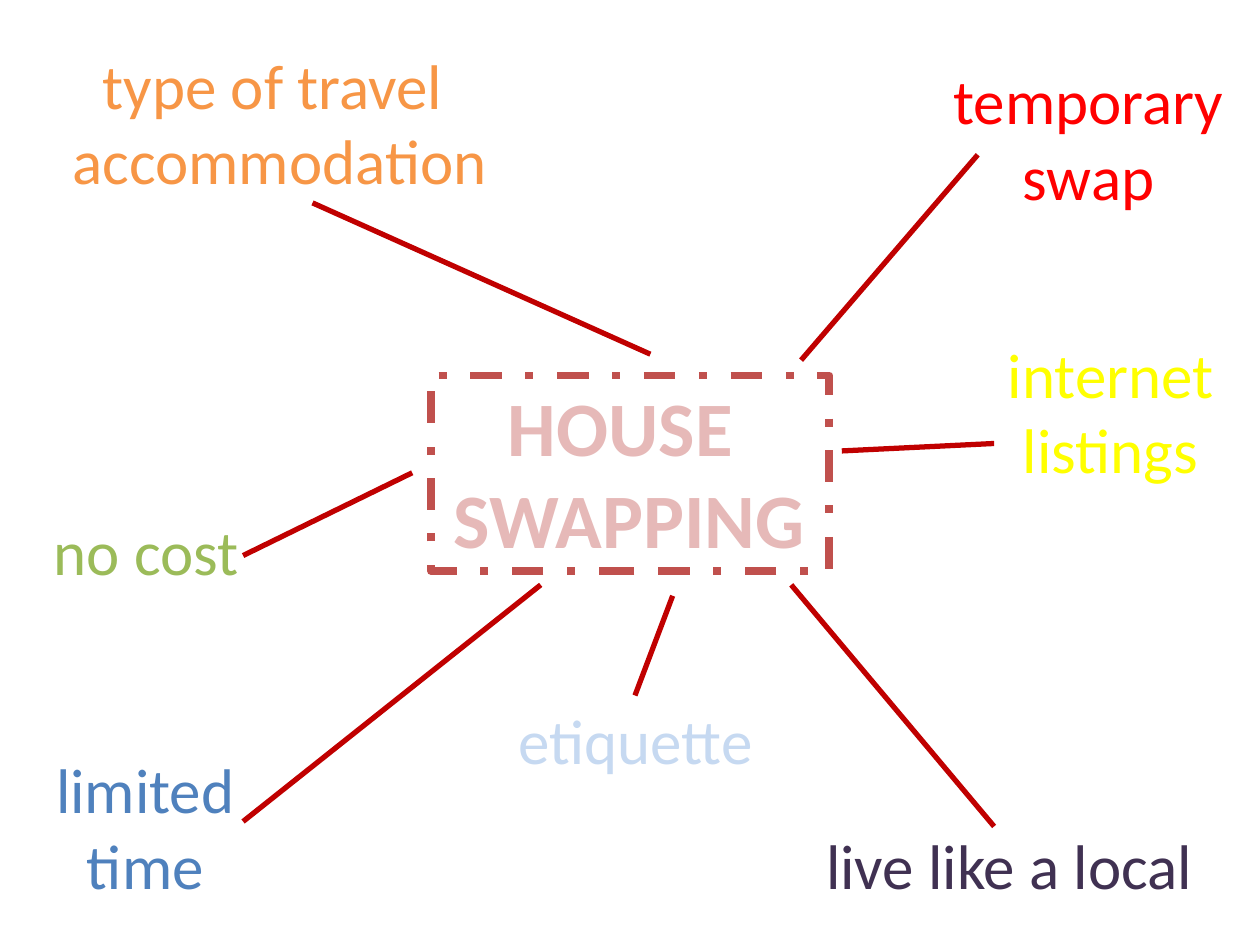
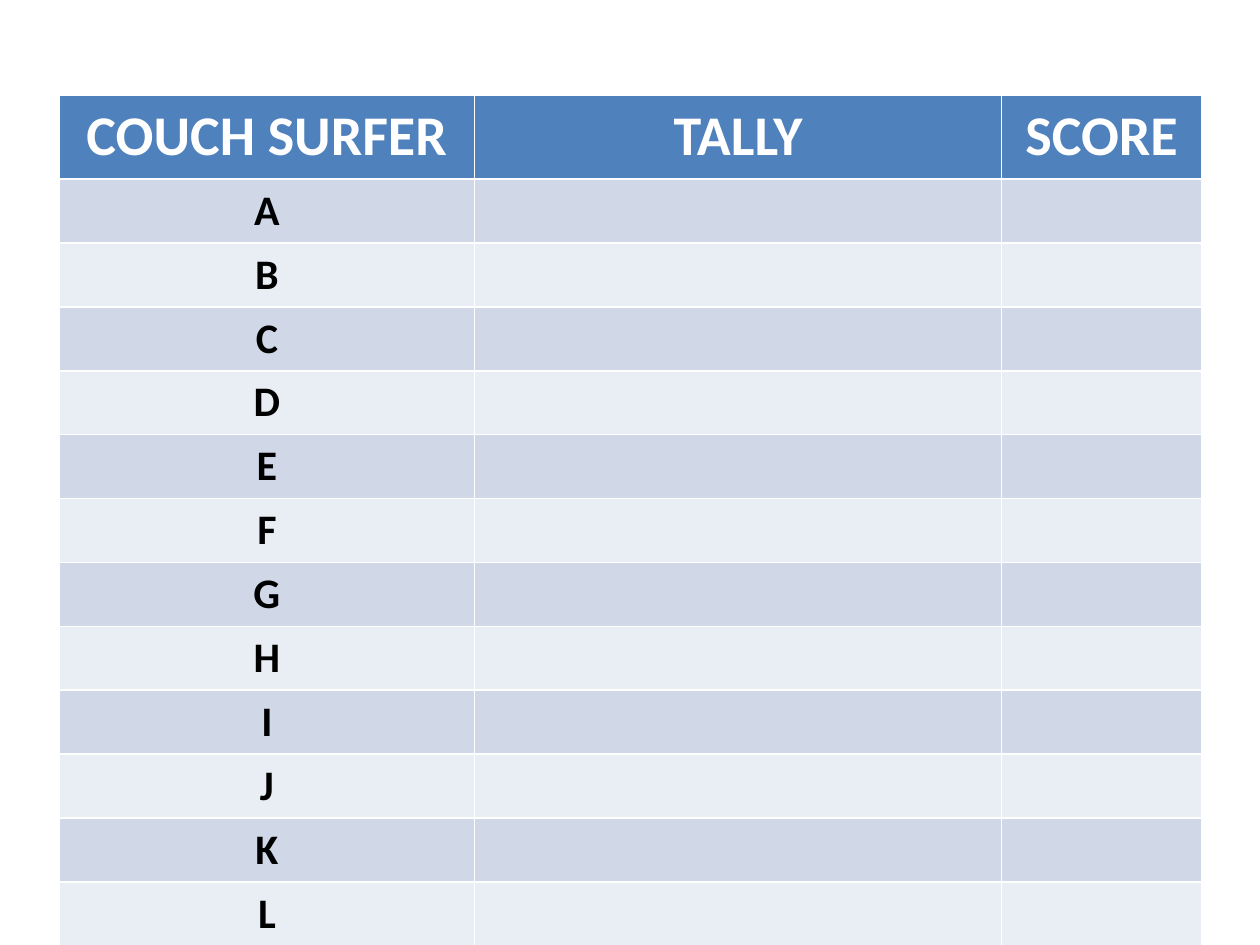
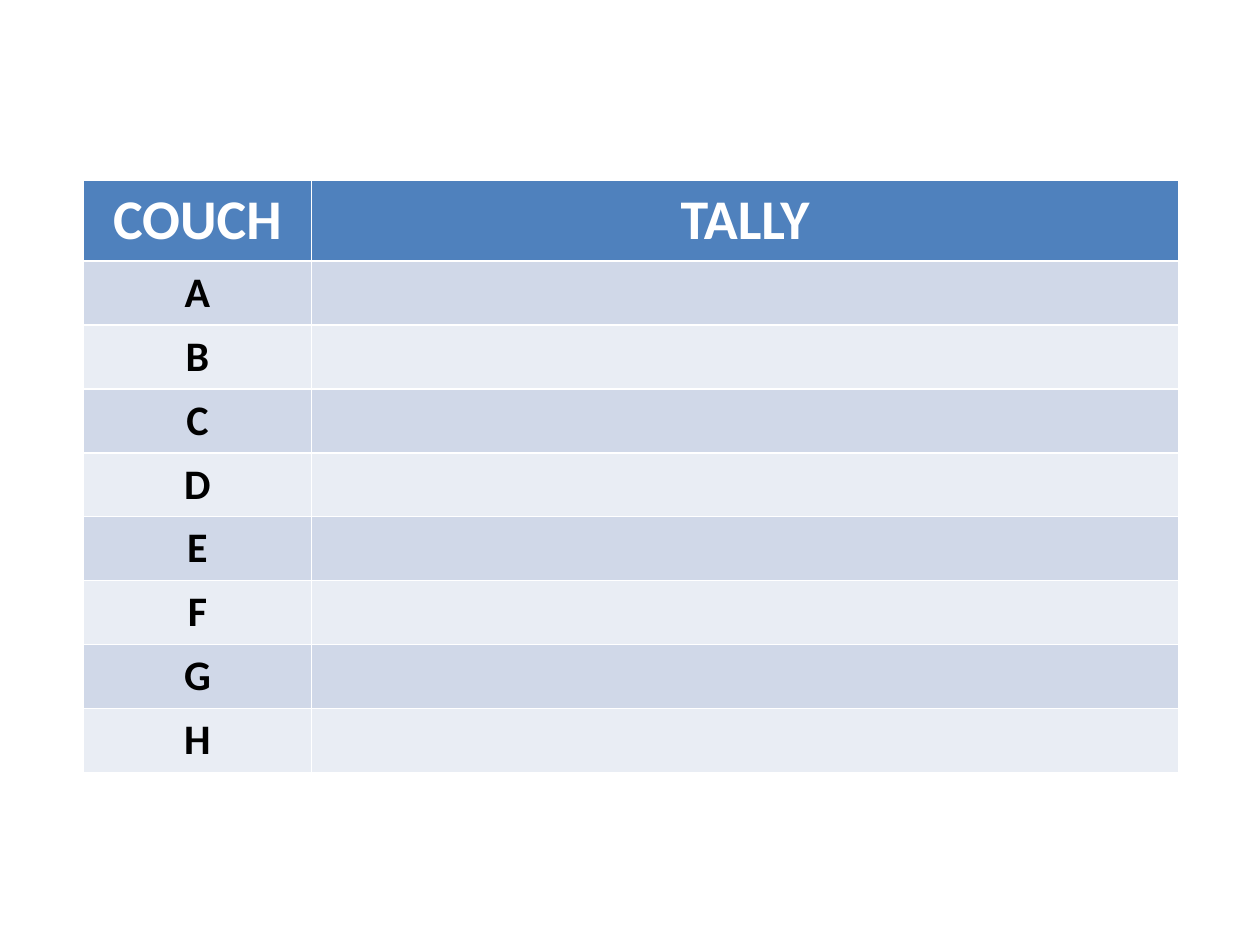
"""Build a house swapping word map and two couch surfing tally tables."""
from lxml.etree import SubElement
from pptx import Presentation
from pptx.dml.color import RGBColor
from pptx.enum.dml import MSO_LINE
from pptx.enum.shapes import MSO_CONNECTOR, MSO_SHAPE
from pptx.enum.text import MSO_AUTO_SIZE, PP_ALIGN
from pptx.oxml import parse_xml
from pptx.oxml.ns import nsdecls, qn
from pptx.util import Cm, Pt

WHITE = RGBColor(0xFF, 0xFF, 0xFF)
BLACK = RGBColor(0x00, 0x00, 0x00)
BLUE = RGBColor(0x4F, 0x81, 0xBD)
PALE_BLUE = RGBColor(0xC6, 0xD9, 0xF1)
BAND_DARK = RGBColor(0xD0, 0xD8, 0xE8)
BAND_LIGHT = RGBColor(0xE9, 0xED, 0xF4)
PINK = RGBColor(0xE6, 0xB9, 0xB8)
BRICK = RGBColor(0xC0, 0x50, 0x4D)
DARK_RED = RGBColor(0xC0, 0x00, 0x00)
RED = RGBColor(0xFF, 0x00, 0x00)
YELLOW = RGBColor(0xFF, 0xFF, 0x00)
ORANGE = RGBColor(0xF7, 0x96, 0x46)
GREEN = RGBColor(0x9B, 0xBB, 0x59)
PURPLE = RGBColor(0x40, 0x31, 0x52)

TOPIC = {"name": "Calibri", "size": Pt(44), "bold": True}
IDEA = {"name": "Calibri", "size": Pt(36)}
HEADING = {"name": "Calibri", "size": Pt(32), "bold": True}
LABEL = {"name": "Calibri", "size": Pt(24), "bold": True}


def write(para, text, look, color):
    """Add one centred run to a paragraph and return it."""
    para.alignment = PP_ALIGN.CENTER
    span = para.add_run()
    span.text = text
    for name, value in look.items():
        setattr(span.font, name, value)
    span.font.color.rgb = color
    return span


deck = Presentation()
deck.slide_width, deck.slide_height = Cm(25.4), Cm(19.05)
blank = deck.slide_layouts[6]

page = deck.slides.add_slide(blank)
words = [
    (["HOUSE ", "SWAPPING"], TOPIC, PINK, False, (8.86, 7.52, 7.65, 4.01)),
    (["live like a local"], IDEA, PURPLE, True, (15.19, 16.54, 10.31, 1.8)),
    (["no cost"], IDEA, GREEN, True, (-0.15, 10.21, 6.2, 1.8)),
    (["type of travel ", "accommodation"], IDEA, ORANGE, False, (1.17, 0.81, 8.94, 3.33)),
    (["etiquette"], IDEA, PALE_BLUE, False, (10.16, 14.02, 5.31, 1.8)),
    (["temporary", "swap"], IDEA, RED, False, (18.95, 1.12, 5.99, 3.33)),
    (["internet", "listings"], IDEA, YELLOW, False, (20.04, 6.63, 4.7, 3.33)),
    (["limited", "time"], IDEA, BLUE, False, (0.86, 15.01, 4.14, 3.33)),
]
for lines, look, color, wraps, place in words:
    box = page.shapes.add_textbox(*map(Cm, place))
    frame = box.text_frame
    frame.word_wrap = wraps
    frame.auto_size = MSO_AUTO_SIZE.SHAPE_TO_FIT_TEXT
    for index, line in enumerate(lines):
        para = frame.add_paragraph() if index else frame.paragraphs[0]
        span = write(para, line, look, color)
        if look is TOPIC:
            outline = parse_xml(
                f'<a:ln {nsdecls("a")} w="{Pt(1.75)}"><a:solidFill>'
                f'<a:srgbClr val="{BRICK}"/></a:solidFill></a:ln>')
            span.font._element.insert(0, outline)

border = page.shapes.add_shape(MSO_SHAPE.RECTANGLE, Cm(8.69), Cm(7.57), Cm(8.03), Cm(3.94))
border.shadow.inherit = False
border.fill.background()
border.line.color.rgb = BRICK
border.line.width = Pt(4.5)
border.line.dash_style = MSO_LINE.DASH_DOT

spokes = [
    (13.11, 7.14, 6.3, 4.09),
    (13.56, 12.01, 12.8, 14.02),
    (16.15, 7.26, 19.71, 3.12),
    (8.31, 9.53, 4.9, 11.2),
    (10.9, 11.79, 4.9, 16.56),
    (20.04, 16.66, 15.95, 11.79),
    (20.04, 8.94, 16.97, 9.09),
]
for ends in spokes:
    spoke = page.shapes.add_connector(MSO_CONNECTOR.STRAIGHT, *map(Cm, ends))
    spoke.line.color.rgb = DARK_RED
    spoke.line.width = Pt(3)
    SubElement(spoke._element.spPr, qn("a:effectLst"))

tallies = [
    (["COUCH SURFER", "TALLY", "SCORE"], "ABCDEFGHIJKL", (1.19, 1.93), (8.38, 10.62, 4.04), 1.68, 1.27),
    (["COUCH", "TALLY"], "ABCDEFGH", (1.68, 3.63), (4.6, 17.48), 1.45, 1.17),
]
for headings, letters, corner, widths, head_height, row_height in tallies:
    page = deck.slides.add_slide(blank)
    height = head_height + row_height * len(letters)
    table = page.shapes.add_table(
        len(letters) + 1, len(widths), *map(Cm, corner), Cm(sum(widths)), Cm(height)).table
    for column, width in zip(table.columns, widths):
        column.width = Cm(width)
    for index, row in enumerate(table.rows):
        row.height = Cm(row_height if index else head_height)
        for cell in row.cells:
            cell.fill.solid()
            cell.fill.fore_color.rgb = (BAND_DARK if index % 2 else BAND_LIGHT) if index else BLUE
    for cell, heading in zip(table.rows[0].cells, headings):
        write(cell.text_frame.paragraphs[0], heading, HEADING, WHITE)
    for index, letter in enumerate(letters, 1):
        write(table.cell(index, 0).text_frame.paragraphs[0], letter, LABEL, BLACK)

deck.save("out.pptx")
